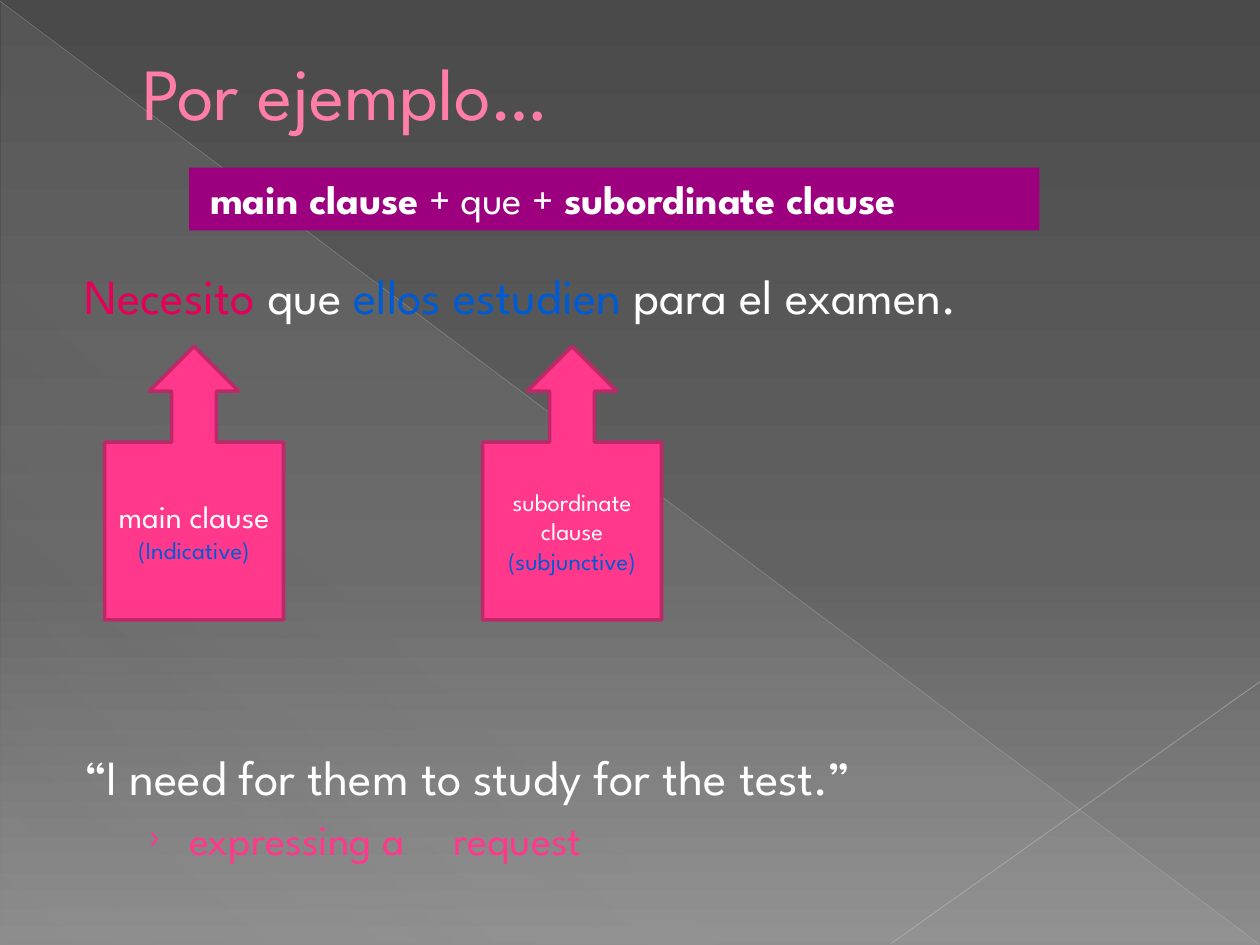
from dataclasses import dataclass
from lxml.etree import SubElement
from pptx import Presentation
from pptx.dml.color import RGBColor
from pptx.enum.shapes import MSO_CONNECTOR, MSO_SHAPE
from pptx.enum.text import MSO_ANCHOR, MSO_AUTO_SIZE, PP_ALIGN
from pptx.oxml.ns import qn
from pptx.util import Inches, Pt

TRI, RECT, CALL = MSO_SHAPE.RIGHT_TRIANGLE, MSO_SHAPE.RECTANGLE, MSO_SHAPE.UP_ARROW_CALLOUT
LINE = MSO_CONNECTOR.STRAIGHT
MID, TOP = MSO_ANCHOR.MIDDLE, MSO_ANCHOR.TOP
LEFT, CENTER = PP_ALIGN.LEFT, PP_ALIGN.CENTER
FIXED = MSO_AUTO_SIZE.NONE
FONT = "League Spartan"
WIDE, HIGH = Inches(10), Inches(7.5)
COLS, ROWS = 40, 30
HEX = {
    "dark": "4A4A4A", "mid": "626262", "light": "8C8C8C", "veil": "D2D2D2",
    "long": "BFBFBF", "short": "C6C6C6", "title": "FF7DA7", "white": "FFFFFF",
    "red": "E40059", "blue": "005BD3", "pink": "FF388C", "edge": "BD2968",
    "plum": "9C007F",
}


@dataclass
class Box:
    col: float
    row: float
    wide: float
    high: float

    def emu(self) -> tuple:
        return (*spot(self.col, self.row), *spot(self.wide, self.high))


@dataclass
class Part:
    text: str
    size: float
    ink: str = "white"
    bold: bool = False


@dataclass
class Ray:
    start: tuple
    end: tuple
    ink: str
    width: float
    alpha: int


def spot(col: float, row: float) -> tuple:
    return round(WIDE * col / COLS), round(HIGH * row / ROWS)


def rgb(name: str) -> RGBColor:
    return RGBColor.from_string(HEX[name])


def fade(fill, stops: list, angle: int) -> None:
    fill.gradient()
    fill.gradient_angle = 360 - angle
    group = fill._fill._gradFill.find(qn("a:gsLst"))
    for old in list(group):
        group.remove(old)
    for pos, ink, alpha in stops:
        stop = SubElement(group, qn("a:gs"), pos=str(pos * 1000))
        tint = SubElement(stop, qn("a:srgbClr"), val=HEX[ink])
        SubElement(tint, qn("a:alpha"), val=str(alpha * 1000))


def write(para, parts: list, align=LEFT, space: float = 0,
          indent: tuple = (0, 0)) -> None:
    para.alignment = align
    para.space_before = Pt(space)
    props = para._p.get_or_add_pPr()
    props.set("marL", str(Inches(indent[0])))
    props.set("indent", str(Inches(indent[1])))
    for part in parts:
        run = para.add_run()
        run.text = part.text
        font = run.font
        font.name, font.size, font.bold = FONT, Pt(part.size), part.bold
        font.color.rgb = rgb(part.ink)


def bullet(para, mark: str = "") -> None:
    props = para._p.get_or_add_pPr()
    if not mark:
        SubElement(props, qn("a:buNone"))
        return
    SubElement(SubElement(props, qn("a:buClr")), qn("a:srgbClr"), val=HEX["pink"])
    SubElement(props, qn("a:buSzPct"), val="95000")
    SubElement(props, qn("a:buFont"), typeface=FONT)
    SubElement(props, qn("a:buChar"), char=mark)


def place(holder, box: Box, anchor):
    holder.left, holder.top, holder.width, holder.height = box.emu()
    frame = holder.text_frame
    frame.auto_size, frame.word_wrap = FIXED, True
    frame.vertical_anchor = anchor
    return frame


def block(slide, kind, box: Box, ink: str = "", edge: str = ""):
    shape = slide.shapes.add_shape(kind, *box.emu())
    shape.shadow.inherit = False
    if ink:
        shape.fill.solid()
        shape.fill.fore_color.rgb = rgb(ink)
    if edge:
        shape.line.color.rgb = rgb(edge)
        shape.line.width = Pt(2)
    else:
        shape.line.fill.background()
    shape.text_frame.word_wrap = True
    return shape


def streak(slide, ray: Ray):
    line = slide.shapes.add_connector(LINE, *spot(*ray.start), *spot(*ray.end))
    line.line.color.rgb = rgb(ray.ink)
    line.line.width = Pt(ray.width)
    props = line._element.spPr
    tint = props.find(".//" + qn("a:srgbClr"))
    SubElement(tint, qn("a:alpha"), val=str(ray.alpha * 1000))
    SubElement(props, qn("a:effectLst"))
    return line


def scene(slide) -> None:
    fade(slide.background.fill,
         [(0, "dark", 100), (60, "mid", 100), (100, "light", 100)], 90)
    veil = block(slide, TRI, Box(0.04, 0.08, 39.96, 29.92))
    fade(veil.fill, [(0, "veil", 10), (70, "veil", 8), (100, "veil", 1)], 133)
    rays = [Ray((0, 0.04), (39.96, 29.96), "long", 0.39, 35),
            Ray((40, 21.64), (28.28, 29.96), "short", 0.47, 45)]
    tree = slide.shapes._spTree
    for rank, item in enumerate([veil] + [streak(slide, ray) for ray in rays]):
        tree.insert(2 + rank, item._element)


def main() -> None:
    deck = Presentation()
    deck.slide_width, deck.slide_height = WIDE, HIGH
    slide = deck.slides.add_slide(deck.slide_layouts[1])
    scene(slide)

    hang = (0.49, -0.42)
    title = place(slide.shapes.title, Box(2, 1.16, 36, 3.48), MID)
    write(title.paragraphs[0], [Part("Por ejemplo…", 42, "title")], indent=(0.53, 0))

    body = place(slide.placeholders[1], Box(2, 8.24, 36, 18.76), TOP)
    first, second, third = body.paragraphs[0], body.add_paragraph(), body.add_paragraph()
    write(first, [Part("Necesito", 28, "red"), Part(" que ", 28),
                  Part("ellos estudien", 28, "blue"),
                  Part(" para el examen.", 28)], space=5.6, indent=hang)
    write(second, [Part("“I need for them to study for the test.”", 28)],
          space=241, indent=hang)
    third.level = 1
    write(third, [Part("expressing a \trequest", 24, "pink")],
          space=4.8, indent=(0.9, -0.31))
    for para, mark in ((first, ""), (second, ""), (third, "›")):
        bullet(para, mark)

    notes = [
        [Part("main clause", 18), Part("(Indicative)", 14, "blue")],
        [Part("subordinate clause", 14), Part("(subjunctive)", 14, "blue")],
    ]
    for rank, parts in enumerate(notes):
        box = Box(3.32 + 12 * rank, 11, 5.68, 8.68)
        frame = block(slide, CALL, box, "pink", "edge").text_frame
        frame.vertical_anchor = MID
        write(frame.paragraphs[0], parts[:1], CENTER)
        write(frame.add_paragraph(), parts[1:], CENTER)

    frame = block(slide, RECT, Box(6, 5.32, 27, 2), "plum").text_frame
    frame.vertical_anchor = TOP
    write(frame.paragraphs[0], [Part("main clause", 23.2, bold=True),
                                Part(" + que + ", 23.2),
                                Part("subordinate clause", 23.2, bold=True)],
          space=4.6, indent=hang)
    deck.save("out.pptx")


if __name__ == "__main__":
    main()
